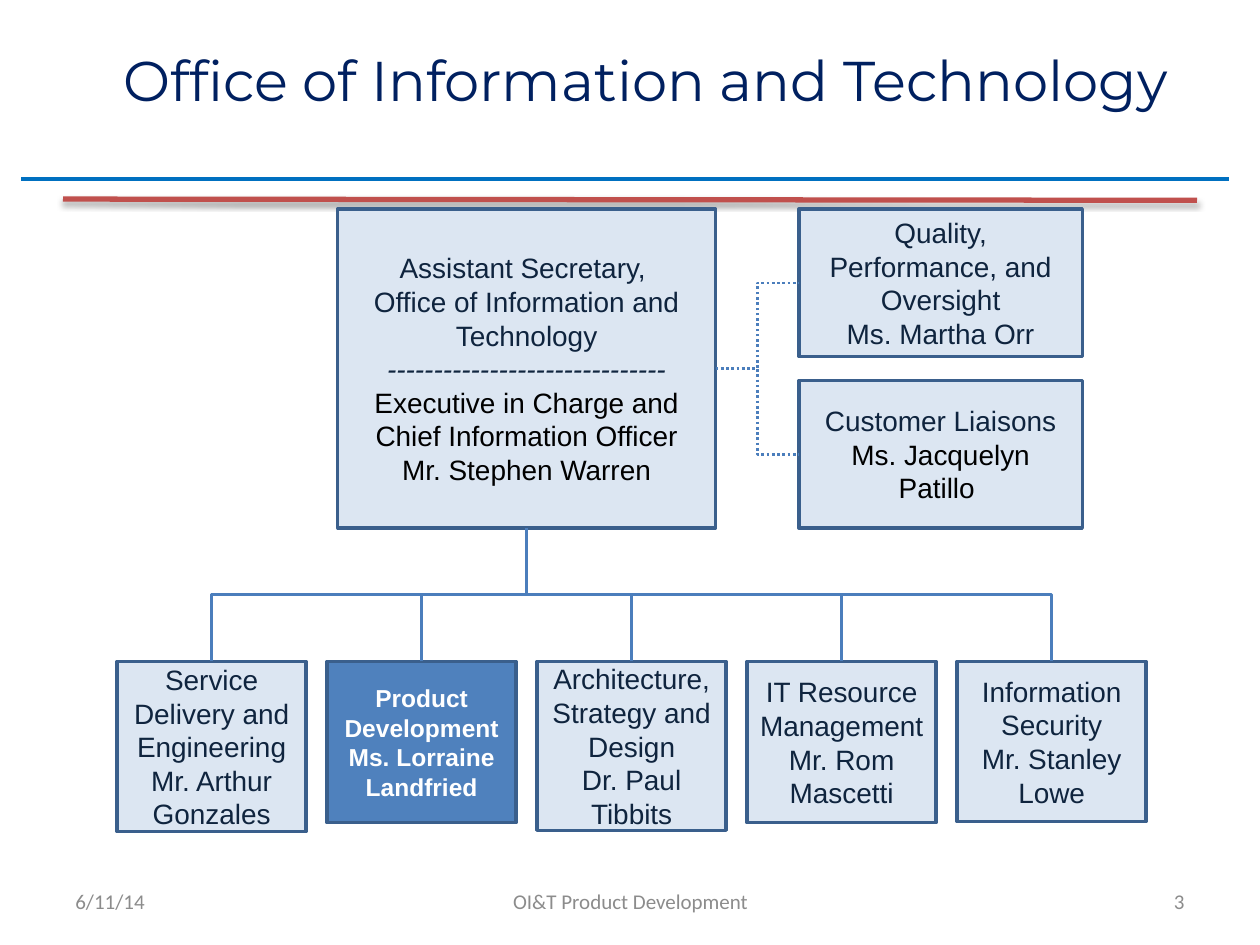
from dataclasses import dataclass
from typing import Any

from lxml.etree import SubElement
from pptx import Presentation
from pptx.dml.color import RGBColor
from pptx.enum.dml import MSO_LINE
from pptx.enum.shapes import MSO_CONNECTOR, MSO_SHAPE
from pptx.enum.text import MSO_ANCHOR, PP_ALIGN
from pptx.oxml.ns import qn
from pptx.util import Inches, Pt

NAVY, BLACK, WHITE = "0F243E", "000000", "FFFFFF"
PALE, BLUE = "DCE6F2", "4F81BD"
BOX_FORMAT = {"name": "Arial", "size": Pt(16)}
FOCUS_FORMAT = {"name": "Arial", "size": Pt(14), "bold": True}
FOOTER_FORMAT = {"name": "Calibri", "size": Pt(12)}
TITLE_FORMAT = {"name": "Montserrat", "size": Pt(32)}


def paint(target, color):
    target.rgb = RGBColor.from_string(color)


@dataclass
class OrgChart:
    page: Any
    border: str = "3A5F8C"
    link: str = "4B7EBC"

    def add_lines(self, shape, lines, values, align=PP_ALIGN.CENTER):
        frame = shape.text_frame
        frame.word_wrap = True
        frame.vertical_anchor = MSO_ANCHOR.MIDDLE
        for index, (text, color, extra) in enumerate(lines):
            para = frame.add_paragraph() if index else frame.paragraphs[0]
            para.alignment = align
            span = para.add_run()
            span.text = text
            for name, value in {**values, **extra}.items():
                setattr(span.font, name, value)
            paint(span.font.color, color)

    def label(self, place, text, color, values, align=PP_ALIGN.CENTER):
        box = self.page.shapes.add_textbox(*map(Inches, place))
        self.add_lines(box, [(text, color, {})], values, align)

    def unit(self, place, lines, fill=PALE, values=BOX_FORMAT):
        box = self.page.shapes.add_shape(MSO_SHAPE.RECTANGLE, *map(Inches, place))
        box.shadow.inherit = False
        box.fill.solid()
        paint(box.fill.fore_color, fill)
        paint(box.line.color, self.border)
        box.line.width = Pt(2)
        self.add_lines(box, lines, values)
        return box

    def connector(self, kind, ends, color, width):
        line = self.page.shapes.add_connector(kind, *ends)
        paint(line.line.color, color)
        line.line.width = Pt(width)
        effects = SubElement(line._element.spPr, qn("a:effectLst"))
        return line, effects

    def rule(self, ends, color, width, shadow=False):
        ends = map(Inches, ends)
        line, effects = self.connector(MSO_CONNECTOR.STRAIGHT, ends, color, width)
        if shadow:
            outer = SubElement(effects, qn("a:outerShdw"), blurRad=str(Pt(3.1)),
                               dist=str(Pt(1.8)), dir="5400000", rotWithShape="0")
            tint = SubElement(outer, qn("a:srgbClr"), val=BLACK)
            SubElement(tint, qn("a:alpha"), val="35000")

    def branch(self, parent, child):
        line, _ = self.connector(MSO_CONNECTOR.ELBOW, (0, 0, 0, 0), self.link, 1.5)
        line.begin_connect(parent, 3)
        line.end_connect(child, 1)
        line.line.dash_style = MSO_LINE.ROUND_DOT

    def drop(self, parent, child):
        line, _ = self.connector(MSO_CONNECTOR.ELBOW, (0, 0, 0, 0), self.link, 1.5)
        line.begin_connect(parent, 2)
        line.end_connect(child, 0)
        start_x = parent.left + parent.width // 2
        start_y = parent.top + parent.height
        across = child.left + child.width // 2 - start_x
        down = child.top - start_y
        line.width, line.height = down, abs(across)
        line.left = start_x + (across - down) // 2
        line.top = start_y + (down - abs(across)) // 2
        frame = line._element.spPr.find(qn("a:xfrm"))
        frame.set("rot", "16200000" if across > 0 else "5400000")
        frame.set("flipH", "1" if across > 0 else "0")
        frame.set("flipV", "0")


def main():
    deck = Presentation()
    deck.slide_width, deck.slide_height = Inches(10), Inches(7.5)
    chart = OrgChart(deck.slides.add_slide(deck.slide_layouts[6]))

    chart.rule((0.17, 1.42, 9.75, 1.42), "0070C0", 2)
    chart.rule((0.5, 1.58, 9.5, 1.59), "C0504D", 3, shadow=True)
    chart.label((0.5, 0, 9.25, 1.25), "Office of Information and Technology",
                "002060", TITLE_FORMAT)

    head = chart.unit((2.68, 1.66, 3, 2.53), [
        ("Assistant Secretary, ", NAVY, {}),
        ("Office of Information and Technology", NAVY, {}),
        ("-" * 30, NAVY, {"italic": True}),
        ("Executive in Charge and Chief Information Officer", BLACK, {}),
        ("Mr. Stephen Warren", BLACK, {}),
    ])

    staff = [
        ("Quality, Performance, and Oversight", "Ms. Martha Orr", NAVY),
        ("Customer Liaisons", "Ms. Jacquelyn Patillo ", BLACK),
    ]
    for row, (office, person, color) in enumerate(staff):
        box = chart.unit((6.34, 1.66 + 1.36 * row, 2.25, 1.17),
                         [(office, NAVY, {}), (person, color, {})])
        chart.branch(head, box)

    divisions = [
        (1.35, ["Service Delivery and Engineering", "Mr. Arthur Gonzales"]),
        (1.28, ["Product Development Ms. Lorraine Landfried"]),
        (1.34, ["Architecture, Strategy and Design", "Dr. Paul Tibbits"]),
        (1.28, ["IT Resource Management", "Mr. Rom Mascetti"]),
        (1.27, ["Information Security", "Mr. Stanley Lowe"]),
    ]
    for column, (height, texts) in enumerate(divisions):
        focus = column == 1
        box = chart.unit((0.93 + 5 / 3 * column, 5.25, 1.5, height),
                         [(text, WHITE if focus else NAVY, {}) for text in texts],
                         BLUE if focus else PALE,
                         FOCUS_FORMAT if focus else BOX_FORMAT)
        chart.drop(head, box)

    footers = [
        (0.5, 2.33, "6/11/14", PP_ALIGN.LEFT),
        (3.42, 3.17, "OI&T Product Development", PP_ALIGN.CENTER),
        (7.17, 2.33, "3", PP_ALIGN.RIGHT),
    ]
    for left, width, text, align in footers:
        chart.label((left, 6.95, width, 0.4), text, "8C8C8C", FOOTER_FORMAT, align)

    deck.save("out.pptx")


if __name__ == "__main__":
    main()
